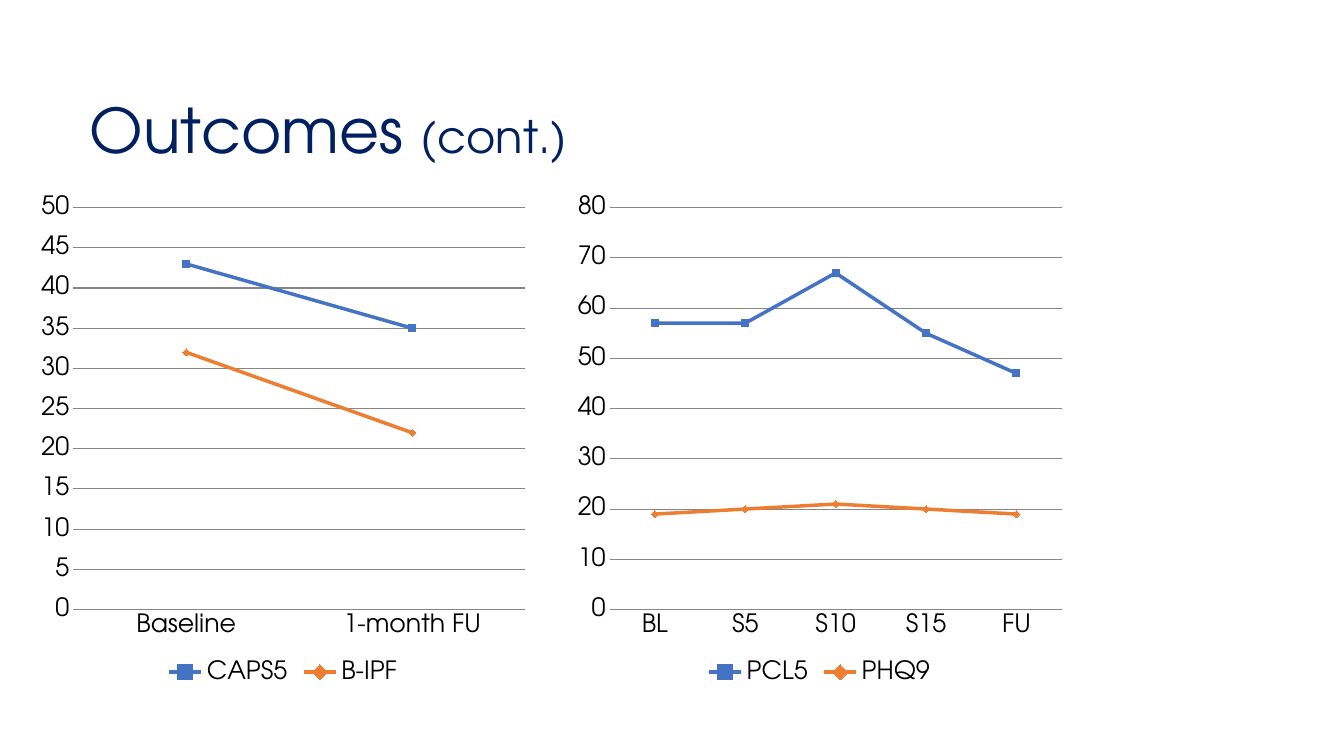
from pptx import Presentation
from pptx.chart import data
from pptx.dml.color import RGBColor
from pptx.enum import chart as ch, text
from pptx.util import Inches, Pt

FONT = "TeX Gyre Adventor"
NAVY, BLACK, GRID = "002060", "000000", "868686"
TITLE = [("Outcomes ", 44), ("(cont.)", 32)]
SERIES_STYLES = [
    ("4472C4", ch.XL_MARKER_STYLE.SQUARE),
    ("ED7D31", ch.XL_MARKER_STYLE.DIAMOND),
]
CHARTS = [
    {"left": 5.63, "top_value": 80, "step": 10,
     "categories": ["BL", "S5", "S10", "S15", "FU"],
     "series": {"PCL5": [57, 57, 67, 55, 47], "PHQ9": [19, 20, 21, 20, 19]}},
    {"left": 0.31, "top_value": 50, "step": 5,
     "categories": ["Baseline", "1-month FU"],
     "series": {"CAPS5": [43, 35], "B-IPF": [32, 22]}},
]
CHART_TOP, CHART_SIDE = 1.84, 5


def color(value):
    return RGBColor.from_string(value)


def set_font(font, size, value):
    font.name = FONT
    font.size = Pt(size)
    font.color.rgb = color(value)


def add_text(page, spans, left, top, width, height, fill=BLACK, spacing=1.0):
    box = page.shapes.add_textbox(Inches(left), Inches(top), Inches(width), Inches(height))
    frame = box.text_frame
    frame.word_wrap = True
    frame.vertical_anchor = text.MSO_ANCHOR.MIDDLE
    para = frame.paragraphs[0]
    para.line_spacing = spacing
    for words, size in spans:
        span = para.add_run()
        span.text = words
        set_font(span.font, size, fill)


def style_line(line, value, width):
    line.color.rgb = color(value)
    line.width = Pt(width)


def add_outcome_chart(page, left, top_value, step, categories, series):
    values = data.CategoryChartData()
    values.categories = categories
    for name, scores in series.items():
        values.add_series(name, scores)
    chart = page.shapes.add_chart(
        ch.XL_CHART_TYPE.LINE_MARKERS, Inches(left), Inches(CHART_TOP),
        Inches(CHART_SIDE), Inches(CHART_SIDE), values).chart
    set_font(chart.font, 18, BLACK)
    chart.has_title = False
    chart.has_legend = True
    chart.legend.position = ch.XL_LEGEND_POSITION.BOTTOM
    chart.legend.include_in_layout = False

    for axis in (chart.category_axis, chart.value_axis):
        axis.major_tick_mark = axis.minor_tick_mark = ch.XL_TICK_MARK.NONE
    style_line(chart.category_axis.format.line, GRID, 0.75)
    scale = chart.value_axis
    scale.minimum_scale, scale.maximum_scale, scale.major_unit = 0, top_value, step
    scale.format.line.fill.background()
    scale.has_major_gridlines = True
    style_line(scale.major_gridlines.format.line, GRID, 0.75)

    plot = chart.plots[0]
    plot.vary_by_categories = False
    for line, (value, marker) in zip(plot.series, SERIES_STYLES):
        line.smooth = False
        style_line(line.format.line, value, 2.5)
        line.marker.style = marker
        line.marker.size = 5
        line.marker.format.fill.solid()
        line.marker.format.fill.fore_color.rgb = color(value)
        line.marker.format.line.color.rgb = color(value)


def main():
    deck = Presentation()
    deck.slide_width, deck.slide_height = Inches(13.33), Inches(7.5)
    page = deck.slides.add_slide(deck.slide_layouts[6])
    for outcome in CHARTS:
        add_outcome_chart(page, **outcome)
    add_text(page, TITLE, 0.79, 0.81, 9.58, 1.03, fill=NAVY, spacing=0.9)
    deck.save("out.pptx")


if __name__ == "__main__":
    main()
